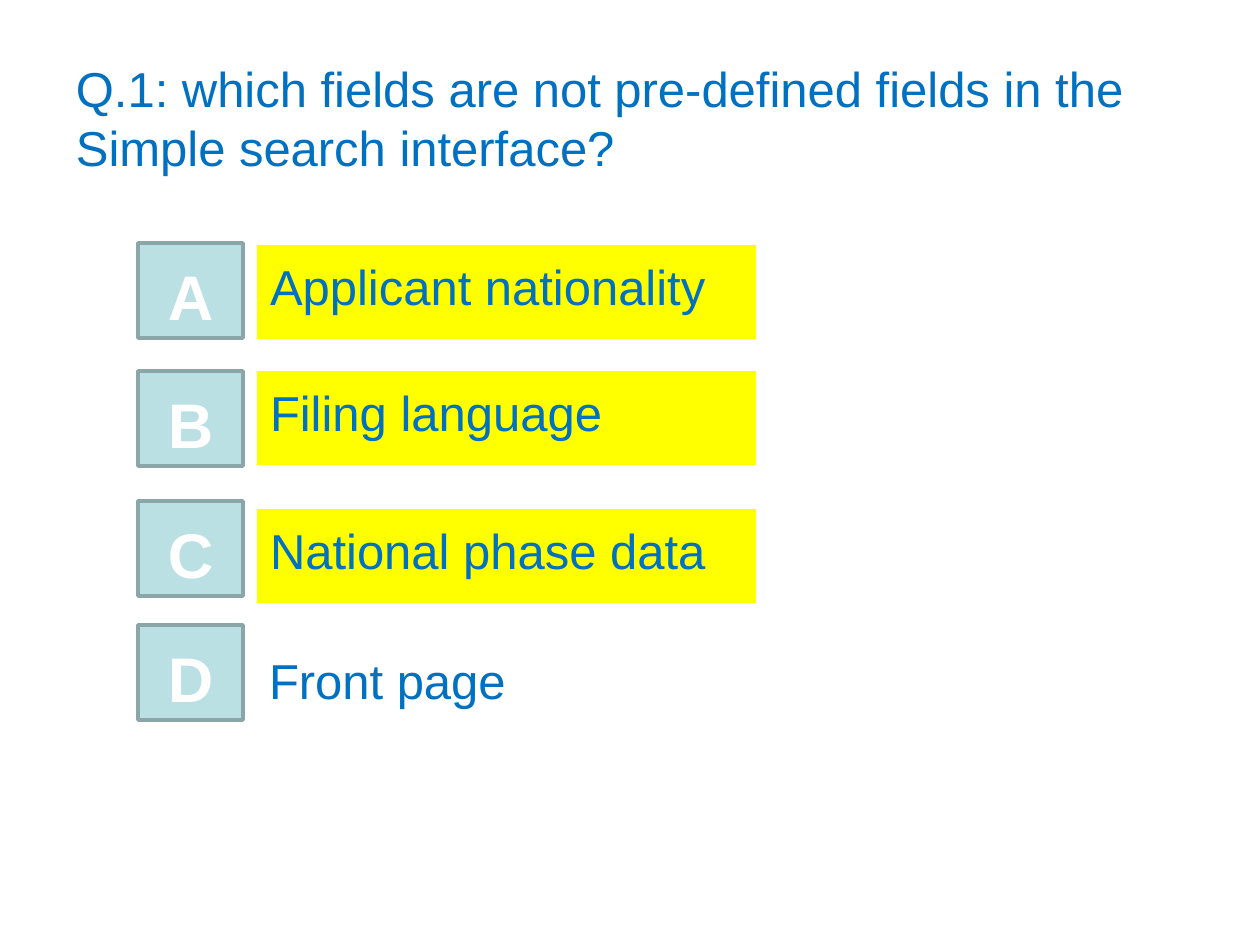
import pptx
import pptx.dml.color
import pptx.enum.shapes
import pptx.enum.text
import pptx.util

SCALE = 914400 // 126
SHAPES = pptx.enum.shapes.MSO_SHAPE
ANCHORS = pptx.enum.text.MSO_ANCHOR
ALIGNS = pptx.enum.text.PP_ALIGN


def color(value):
    return pptx.dml.color.RGBColor.from_string(value)


def add_text(text, left, top, width, height, kind=None, fill=None, line=None,
             size=28, ink="0070C0", bold=False, anchor=ANCHORS.TOP,
             align=ALIGNS.LEFT, inset=11):
    place = [value * SCALE for value in (left, top, width, height)]
    if kind is None:
        box = page.shapes.add_textbox(*place)
    else:
        box = page.shapes.add_shape(kind, *place)
        box.shadow.inherit = False
        box.fill.solid()
        box.fill.fore_color.rgb = color(fill)
        if line:
            box.line.color.rgb = color(line)
            box.line.width = pptx.util.Pt(2)
        else:
            box.line.fill.background()
    frame = box.text_frame
    frame.word_wrap = True
    frame.vertical_anchor = anchor
    frame.margin_left = frame.margin_right = 13 * SCALE
    frame.margin_top = inset * SCALE
    frame.margin_bottom = 6 * SCALE
    para = frame.paragraphs[0]
    para.alignment = align
    span = para.add_run()
    span.text = text
    span.font.name = "Arial"
    span.font.size = pptx.util.Pt(size)
    span.font.bold = bold
    span.font.color.rgb = color(ink)


deck = pptx.Presentation()
deck.slide_width = 1260 * SCALE
deck.slide_height = 945 * SCALE
page = deck.slides.add_slide(deck.slide_layouts[6])

add_text("Q.1: which fields are not pre-defined fields in the Simple search interface?",
         63, 38, 1134, 158, anchor=ANCHORS.MIDDLE, inset=6)

answers = [
    ("A", 243, "Applicant nationality", 245, True),
    ("B", 371, "Filing language", 371, True),
    ("C", 501, "National phase data", 509, True),
    ("D", 625, "Front page", 640, False),
]
for letter, button_top, answer, answer_top, highlighted in answers:
    add_text(letter, 138, button_top, 105, 95, kind=SHAPES.ACTION_BUTTON_CUSTOM,
             fill="BBE0E3", line="8AA6A8", size=36, ink="FFFFFF", bold=True,
             anchor=ANCHORS.MIDDLE, align=ALIGNS.CENTER, inset=16)
    if highlighted:
        add_text(answer, 257, answer_top, 499, 94, kind=SHAPES.RECTANGLE, fill="FFFF00")
    else:
        add_text(answer, 256, answer_top, 273, 78)

deck.save("out.pptx")
